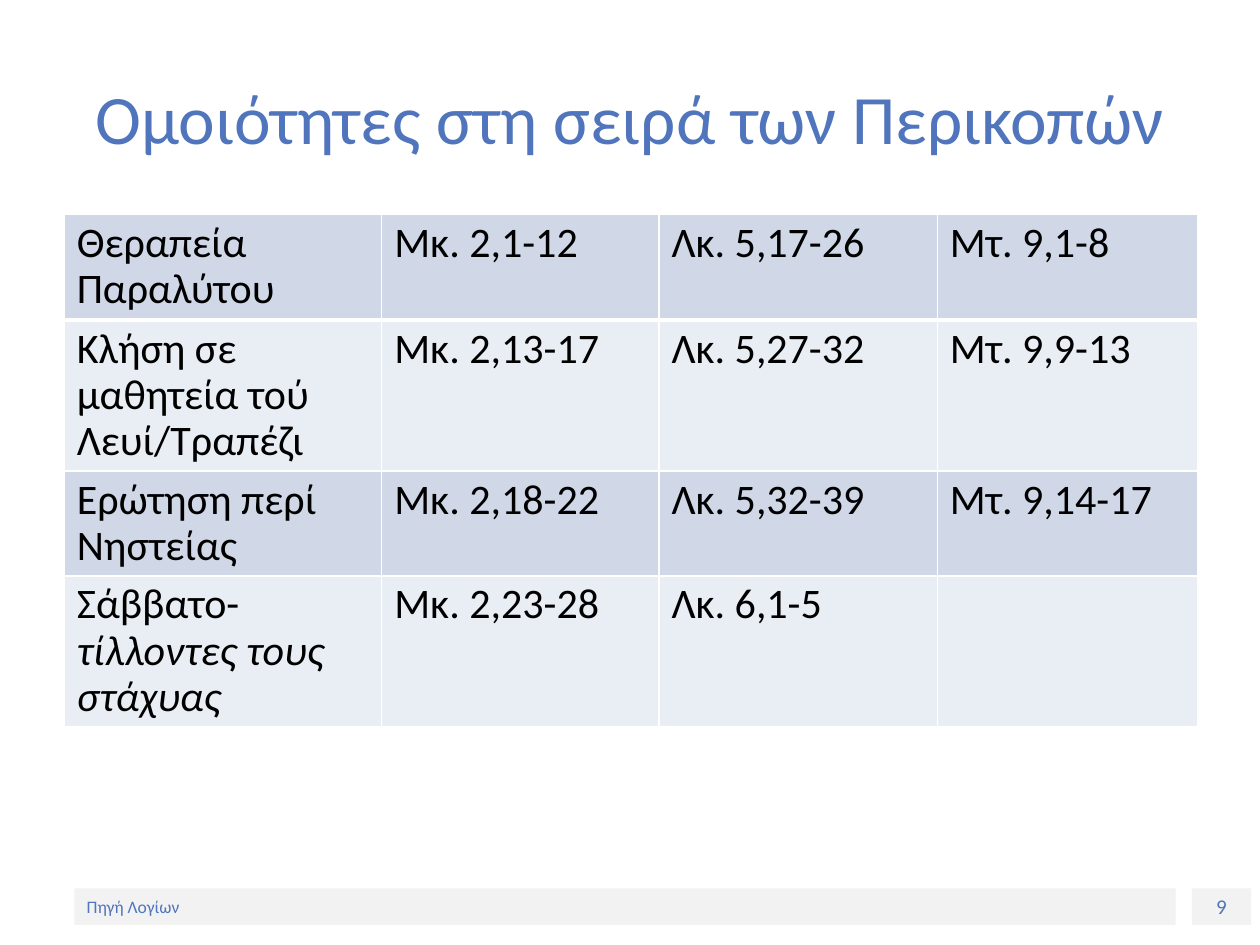
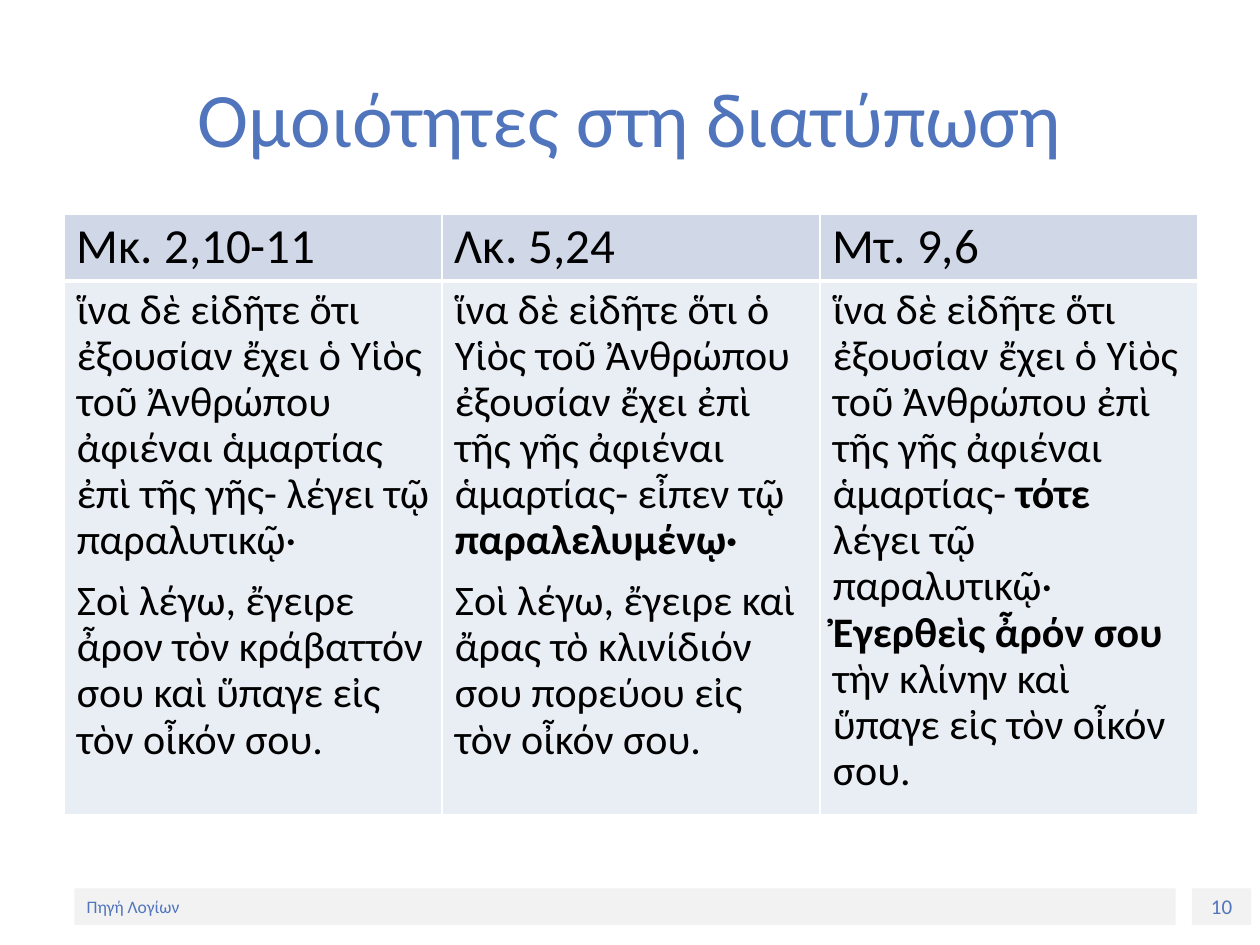
"""Build two slides that compare the Gospel passages in tables."""
from dataclasses import dataclass

from lxml.etree import SubElement
from pptx import Presentation
from pptx.dml.color import RGBColor
from pptx.enum.shapes import MSO_SHAPE
from pptx.enum.text import MSO_ANCHOR, PP_ALIGN
from pptx.oxml.ns import qn
from pptx.util import Inches, Pt


@dataclass(frozen=True)
class Theme:
    face: str = "Calibri"
    blue: str = "5075BC"
    ink: str = "000000"
    white: str = "FFFFFF"
    band: str = "F2F2F2"
    dark: str = "D0D8E8"
    light: str = "E9EDF4"
    title: float = 44
    tight: float = 39.6
    head: float = 28
    body: float = 24
    page: float = 12
    foot: float = 10
    thin: float = 1
    thick: float = 3
    gap: float = 8.4
    lead: float = 0.9


THEME = Theme()
FOOTER = "Πηγή Λογίων"
OXIA = dict(zip(map(ord, "άέήίόύώ"), range(0x1F71, 0x1F7E, 2)))

ORDER = [
    ["Θεραπεία Παραλύτου", "Μκ. 2,1-12", "Λκ. 5,17-26", "Μτ. 9,1-8"],
    ["Κλήση σε μαθητεία τού Λευί/Τραπέζι", "Μκ. 2,13-17", "Λκ. 5,27-32", "Μτ. 9,9-13"],
    ["Ερώτηση περί Νηστείας", "Μκ. 2,18-22", "Λκ. 5,32-39", "Μτ. 9,14-17"],
    ["Σάββατο-*τίλλοντες τους στάχυας*", "Μκ. 2,23-28", "Λκ. 6,1-5", ""],
]

HEADS = ["Μκ. 2,10-11", "Λκ. 5,24", "Μτ. 9,6"]
VERSES = [
    "ἵνα δὲ εἰδῆτε ὅτι ἐξουσίαν ἔχει ὁ Υἱὸς τοῦ Ἀνθρώπου ἀφιέναι ἁμαρτίας "
    "ἐπὶ τῆς γῆς- λέγει τῷ παραλυτικῷ·\n"
    "Σοὶ λέγω, ἔγειρε ἆρον τὸν κράβαττόν σου καὶ ὕπαγε εἰς τὸν οἶκόν σου.",
    "ἵνα δὲ εἰδῆτε ὅτι ὁ Υἱὸς τοῦ Ἀνθρώπου ἐξουσίαν ἔχει ἐπὶ τῆς γῆς ἀφιέναι "
    "ἁμαρτίας- εἶπεν τῷ *παραλελυμένῳ·*\n"
    "Σοὶ λέγω, ἔγειρε καὶ ἄρας τὸ κλινίδιόν σου πορεύου εἰς τὸν οἶκόν σου.",
    "ἵνα δὲ εἰδῆτε ὅτι ἐξουσίαν ἔχει ὁ Υἱὸς τοῦ Ἀνθρώπου ἐπὶ τῆς γῆς ἀφιέναι "
    "ἁμαρτίας- *τότε *λέγει τῷ παραλυτικῷ· *Ἐγερθεὶς ἆρόν σου *"
    "τὴν κλίνην καὶ ὕπαγε εἰς τὸν οἶκόν σου.",
]
WORDING = [HEADS, [verse.translate(OXIA) for verse in VERSES]]


def apply(item, values):
    for name, value in values.items():
        setattr(item, name, value)


def add_run(para, text, size, color, **marks):
    run = para.add_run()
    run.text = text
    apply(run.font, {"name": THEME.face, "size": Pt(size), **marks})
    run.font.color.rgb = RGBColor.from_string(color)


def write_line(shape, text, size, align):
    frame = shape.text_frame
    apply(frame, {"word_wrap": True, "vertical_anchor": MSO_ANCHOR.MIDDLE})
    para = frame.paragraphs[0]
    para.alignment = align
    add_run(para, text, size, THEME.blue)


def add_title(slide, text, size):
    box = slide.shapes.add_textbox(Inches(0.5), Inches(0.3), Inches(9), Inches(1.25))
    write_line(box, text, size, PP_ALIGN.CENTER)


def add_band(slide, left, width, text, size, align):
    band = slide.shapes.add_shape(
        MSO_SHAPE.RECTANGLE, Inches(left), Inches(7.05), Inches(width), Inches(0.29))
    band.shadow.inherit = False
    band.fill.solid()
    band.fill.fore_color.rgb = RGBColor.from_string(THEME.band)
    band.line.fill.background()
    write_line(band, text, size, align)


def add_edges(cell, top, base):
    props = cell._tc.get_or_add_tcPr()
    widths = {"L": THEME.thin, "R": THEME.thin, "T": top, "B": base}
    for side, width in widths.items():
        edge = SubElement(props, qn(f"a:ln{side}"), w=str(Pt(width)))
        fill = SubElement(edge, qn("a:solidFill"))
        SubElement(fill, qn("a:srgbClr"), val=THEME.white)


def fill_cell(cell, text, size, color, mark):
    cell.fill.solid()
    cell.fill.fore_color.rgb = RGBColor.from_string(color)
    frame = cell.text_frame
    for index, line in enumerate(text.split("\n")):
        para = frame.add_paragraph() if index else frame.paragraphs[0]
        apply(para, {"line_spacing": THEME.lead, "space_before": Pt(THEME.gap if index else 0)})
        for part, piece in enumerate(line.split("*")):
            if piece:
                add_run(para, piece, size, THEME.ink, **{mark: part % 2 == 1})


def add_grid(slide, rows, widths, heights, sizes, mark):
    frame = slide.shapes.add_table(
        len(rows), len(widths), Inches(0.51), Inches(1.7),
        Inches(sum(widths)), Inches(sum(heights)))
    table = frame.table
    apply(table, {"first_row": False, "horz_banding": False})
    for col, width in zip(table.columns, widths):
        col.width = Inches(width)
    for r, (row, height, size) in enumerate(zip(rows, heights, sizes)):
        table.rows[r].height = Inches(height)
        top = THEME.thick if r == 1 else THEME.thin
        base = THEME.thick if r == 0 else THEME.thin
        color = THEME.light if r % 2 else THEME.dark
        for c, text in enumerate(row):
            cell = table.cell(r, c)
            add_edges(cell, top, base)
            fill_cell(cell, text, size, color, mark)


def add_page(deck, number, title, size):
    slide = deck.slides.add_slide(deck.slide_layouts[6])
    add_band(slide, 9.46, 0.47, str(number), THEME.page, PP_ALIGN.CENTER)
    add_band(slide, 0.59, 8.74, FOOTER, THEME.foot, PP_ALIGN.LEFT)
    add_title(slide, title, size)
    return slide


def main():
    deck = Presentation()
    apply(deck, {"slide_width": Inches(10), "slide_height": Inches(7.5)})
    slide = add_page(deck, 9, "Ομοιότητες στη σειρά των Περικοπών", THEME.tight)
    add_grid(slide, ORDER, [2.52, 2.2, 2.21, 2.07], [0.84, 1.2, 0.83, 1.2],
             [THEME.body] * 4, "italic")
    slide = add_page(deck, 10, "Ομοιότητες στη διατύπωση", THEME.title)
    add_grid(slide, WORDING, [3] * 3, [0.53, 4.24], [THEME.head, THEME.body], "bold")
    deck.save("out.pptx")


if __name__ == "__main__":
    main()
